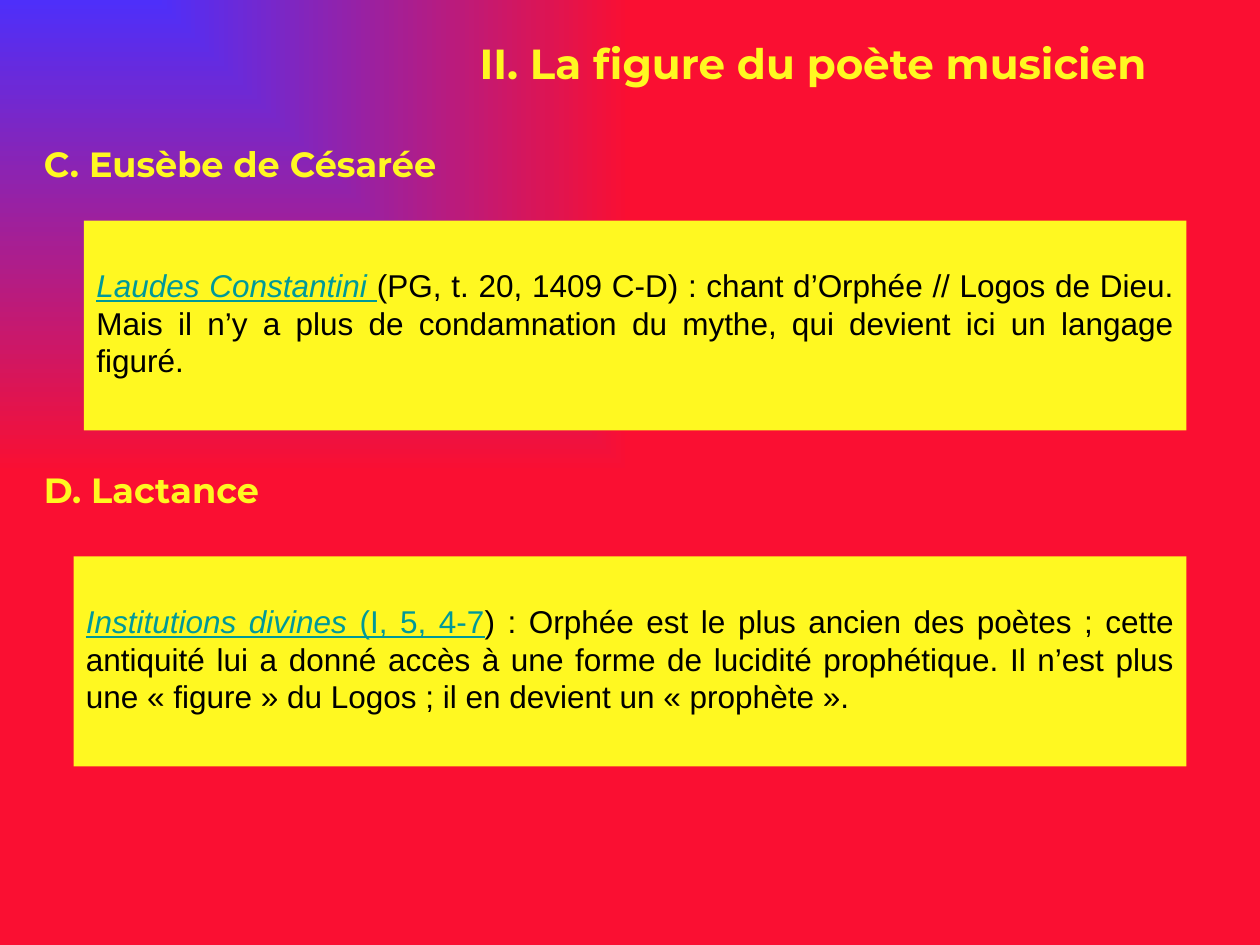
import pptx
import pptx.dml.color
import pptx.enum.shapes
import pptx.enum.text
import pptx.oxml
import pptx.oxml.ns
import pptx.util

WIDTH, HEIGHT = 10, 7.5
COLUMN, ROW = WIDTH / 120, HEIGHT / 90
YELLOW, BLUE, RED, LINK, BLACK = "FFF821", "4E2FFA", "FA0F32", "009999", "000000"


def colour(hex_value):
    return pptx.dml.color.RGBColor.from_string(hex_value)


def grid_box(column, row, columns, rows):
    lengths = (column * COLUMN, row * ROW, columns * COLUMN, rows * ROW)
    return [pptx.util.Inches(length) for length in lengths]


def paint_corner_gradient(slide, inner, outer):
    slide.background.fill.solid()
    properties = slide.background._cSld.bg.bgPr
    gradient = pptx.oxml.parse_xml(
        f'<a:gradFill {pptx.oxml.ns.nsdecls("a")} rotWithShape="0"><a:gsLst>'
        f'<a:gs pos="0"><a:srgbClr val="{inner}"/></a:gs>'
        f'<a:gs pos="100000"><a:srgbClr val="{outer}"/></a:gs></a:gsLst>'
        '<a:path path="rect"><a:fillToRect r="100000" b="100000"/></a:path></a:gradFill>'
    )
    properties.replace(properties[0], gradient)


def add_heading(slide, box, text, size):
    frame = slide.shapes.add_textbox(*grid_box(*box)).text_frame
    frame.word_wrap = True
    heading = frame.paragraphs[0]
    heading.text = text
    heading.font.name = "Montserrat"
    heading.font.size = pptx.util.Pt(size)
    heading.font.bold = True
    heading.font.color.rgb = colour(YELLOW)


def add_citation(slide, box, title, reference, comment):
    panel = slide.shapes.add_shape(pptx.enum.shapes.MSO_SHAPE.RECTANGLE, *grid_box(*box))
    panel.shadow.inherit = False
    panel.fill.solid()
    panel.fill.fore_color.rgb = colour(YELLOW)
    panel.line.fill.background()
    frame = panel.text_frame
    frame.word_wrap = True
    frame.vertical_anchor = pptx.enum.text.MSO_ANCHOR.TOP
    frame.margin_top = pptx.util.Inches(0.36)
    citation = frame.paragraphs[0]
    citation.alignment = pptx.enum.text.PP_ALIGN.JUSTIFY
    citation.line_spacing = pptx.util.Pt(21.6)
    citation.font.name = "Arial"
    citation.font.size = pptx.util.Pt(18)
    parts = [(title, LINK, True, True), (reference, LINK, False, True), (comment, BLACK, False, False)]
    for text, ink, italic, underline in parts:
        part = citation.add_run()
        part.text = text
        part.font.color.rgb = colour(ink)
        part.font.italic = italic
        part.font.underline = underline


def main():
    deck = pptx.Presentation()
    deck.slide_width = pptx.util.Inches(WIDTH)
    deck.slide_height = pptx.util.Inches(HEIGHT)
    slide = deck.slides.add_slide(deck.slide_layouts[6])
    paint_corner_gradient(slide, BLUE, RED)

    add_heading(slide, (44.5, 3, 72.5, 9), "II. La figure du poète musicien", 24)
    add_heading(slide, (3, 13, 53, 7), "C. Eusèbe de Césarée", 20)
    add_citation(
        slide, (8, 21, 105, 20), "Laudes Constantini", " ",
        "(PG, t. 20, 1409 C-D) : chant d’Orphée // Logos de Dieu. Mais il n’y a plus "
        "de condamnation du mythe, qui devient ici un langage figuré.",
    )
    add_heading(slide, (3, 44, 53, 7), "D. Lactance", 20)
    add_citation(
        slide, (7, 53, 106, 20), "Institutions divines", " (I, 5, 4-7",
        ") : Orphée est le plus ancien des poètes ; cette antiquité lui a donné accès "
        "à une forme de lucidité prophétique. Il n’est plus une « figure » du Logos ; "
        "il en devient un « prophète ».",
    )
    deck.save("out.pptx")


if __name__ == "__main__":
    main()
